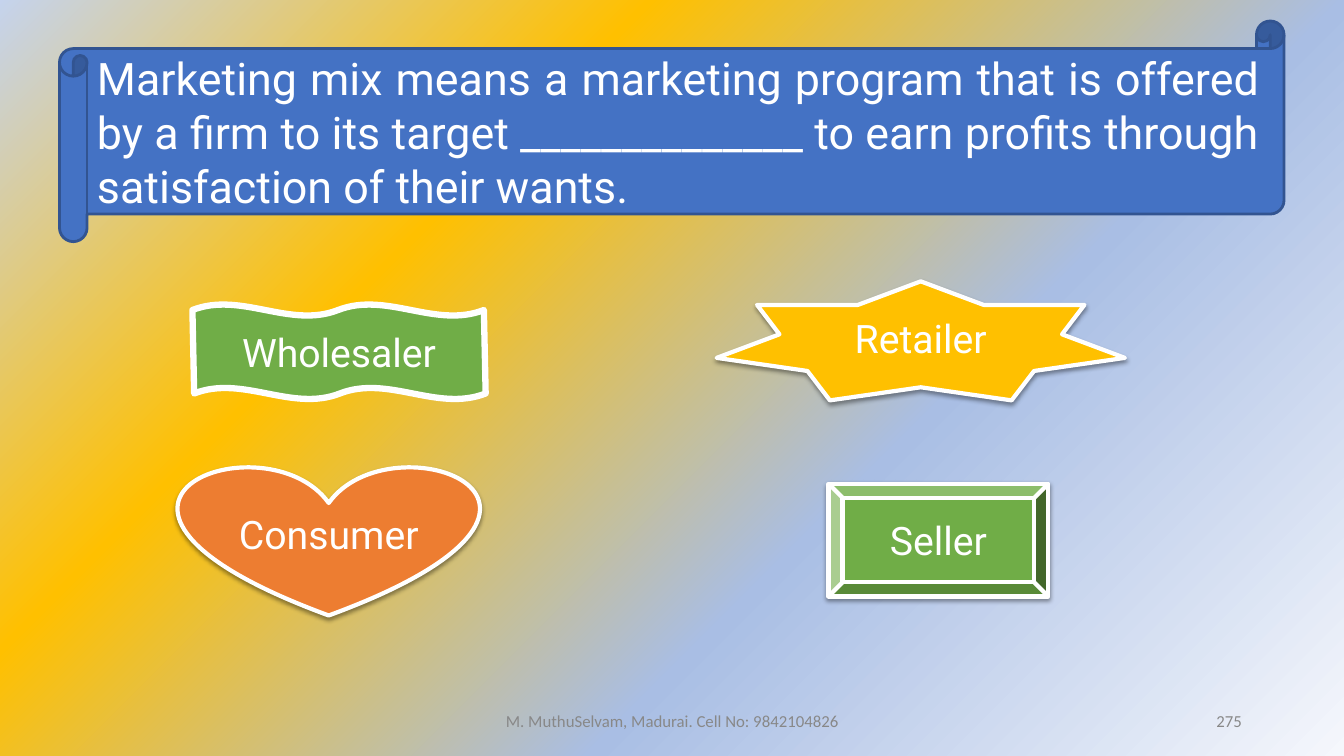
from lxml.etree import SubElement
from pptx import Presentation
from pptx.dml.color import RGBColor
from pptx.enum.shapes import MSO_SHAPE
from pptx.enum.text import MSO_ANCHOR, PP_ALIGN
from pptx.oxml import parse_xml
from pptx.oxml.ns import nsdecls, qn
from pptx.util import Cm, Pt

THEME = {
    "blue": "4472C4",
    "navy": "325491",
    "green": "70AD47",
    "gold": "FFC000",
    "orange": "ED7D31",
    "white": "FFFFFF",
    "grey": "888888",
    "shadow": "000000",
    "backdrop": [(0, "F5F7FC"), (36, "A9BEE4"), (69, "FFC000"), (100, "C5D3ED")],
    "question": {"name": "Roboto", "size": Pt(32)},
    "answer": {"name": "Roboto", "size": Pt(28)},
    "footer": {"name": "Calibri", "size": Pt(12)},
}


def write_text(box, text, style, color, align):
    frame = box.text_frame
    frame.word_wrap = True
    frame.vertical_anchor = MSO_ANCHOR.MIDDLE
    para = frame.paragraphs[0]
    para.alignment = align
    span = para.add_run()
    span.text = text
    for key, value in THEME[style].items():
        setattr(span.font, key, value)
    span.font.color.rgb = RGBColor.from_string(THEME[color])


def add_box(page, kind, place, fill, line, width):
    box = page.shapes.add_shape(kind, *map(Cm, place))
    box.shadow.inherit = False
    box.fill.solid()
    box.fill.fore_color.rgb = RGBColor.from_string(THEME[fill])
    box.line.color.rgb = RGBColor.from_string(THEME[line])
    box.line.width = Pt(width)
    return box


deck = Presentation()
deck.slide_width, deck.slide_height = Cm(33.87), Cm(19.05)
page = deck.slides.add_slide(deck.slide_layouts[6])

page.background.fill.solid()
backdrop = page.element.find(".//" + qn("p:bgPr"))
stops = "".join(
    f'<a:gs pos="{percent * 1000}"><a:srgbClr val="{color}"/></a:gs>'
    for percent, color in THEME["backdrop"]
)
backdrop.replace(backdrop[0], parse_xml(
    f'<a:gradFill {nsdecls("a")} rotWithShape="1"><a:gsLst>{stops}</a:gsLst>'
    '<a:path path="circle"><a:fillToRect l="100000" t="100000"/></a:path>'
    '<a:tileRect r="-100000" b="-100000"/></a:gradFill>'
))

answers = [
    ("Consumer", MSO_SHAPE.HEART, (4.5, 11.73, 7.57, 3.78), "orange", 3, True),
    ("Retailer", MSO_SHAPE.STAR_7_POINT, (18.06, 7.09, 10.29, 3), "gold", 3, True),
    ("Seller", MSO_SHAPE.BEVEL, (20.88, 12.19, 5.54, 2.84), "green", 3, True),
    ("Wholesaler", MSO_SHAPE.DOUBLE_WAVE, (4.85, 7.67, 7.39, 2.39), "green", 4.5, False),
]
for text, kind, place, fill, width, shaded in answers:
    answer = add_box(page, kind, place, fill, "white", width)
    write_text(answer, text, "answer", "white", PP_ALIGN.CENTER)
    if kind == MSO_SHAPE.DOUBLE_WAVE:
        answer.adjustments[0], answer.adjustments[1] = 0.06, 0.003
    if shaded:
        effects = answer.element.spPr.find(qn("a:effectLst"))
        shadow = SubElement(effects, qn("a:outerShdw"), blurRad="40000",
                            dist="20000", dir="5400000", rotWithShape="0")
        tint = SubElement(shadow, qn("a:srgbClr"), val=THEME["shadow"])
        SubElement(tint, qn("a:alpha"), val="38000")

scroll = add_box(page, MSO_SHAPE.HORIZONTAL_SCROLL, (1.5, 0.53, 30.86, 5.56),
                 "blue", "navy", 2)
write_text(
    scroll,
    "Marketing mix means a marketing program that is offered by a firm to its target "
    "______________ to earn profits through satisfaction of their wants.",
    "question", "white", PP_ALIGN.JUSTIFY,
)

footers = [
    ("M. MuthuSelvam, Madurai. Cell No: 9842104826", 11.23, 11.43, PP_ALIGN.CENTER),
    ("275", 23.93, 7.62, PP_ALIGN.RIGHT),
]
for text, left, width, align in footers:
    footer = page.shapes.add_textbox(Cm(left), Cm(17.65), Cm(width), Cm(1.02))
    write_text(footer, text, "footer", "grey", align)

deck.save("out.pptx")
